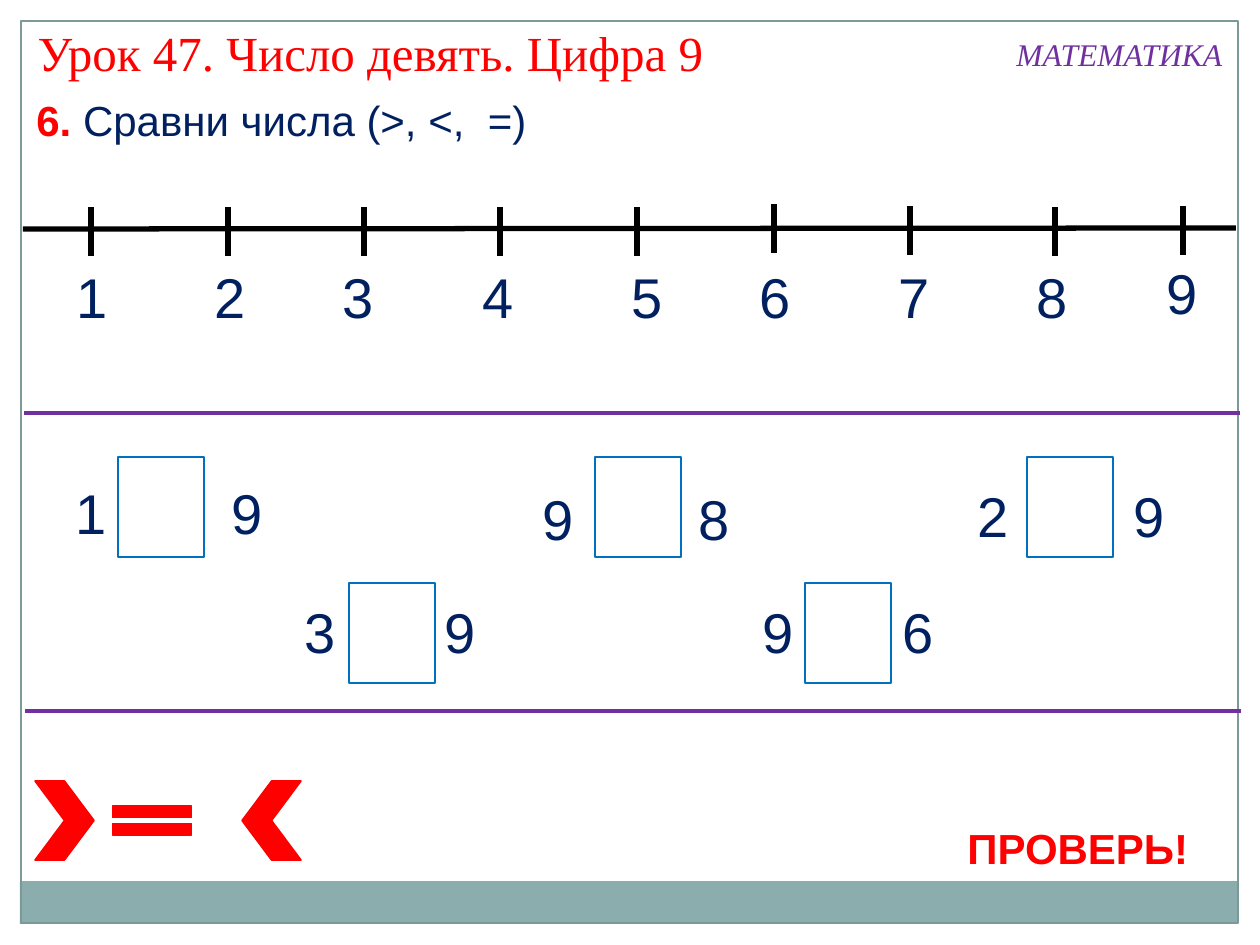
import pptx
import pptx.util
import pptx.dml.color
import pptx.enum.shapes
import pptx.enum.text
from lxml import etree

PX = 914400 / 126
SHAPE = pptx.enum.shapes.MSO_SHAPE
RED, NAVY, PURPLE, BLUE = "FF0000", "002060", "7030A0", "0070C0"
TEAL, FRAME_GREY, BLACK = "8CADAE", "7C999A", "000000"

TITLE = "Урок 47. Число девять. Цифра 9"
SUBJECT = "МАТЕМАТИКА"
TASK = [("6.", RED, True), (" Сравни числа (>, <,  =)", NAVY, False)]
CHECK = "ПРОВЕРЬ!"

# tick x, tick top, digit left, digit top; the digits are 1 to 9
NUMBER_LINE = [
    (91, 207, 64, 256), (228, 207, 202, 256), (364, 207, 330, 256),
    (500, 207, 470, 256), (637, 207, 619, 256), (774, 204, 747, 256),
    (910, 206, 886, 256), (1055, 207, 1024, 256), (1183, 206, 1154, 252),
]
TICK_HEIGHT = 49

# left number, right number, text position, distance between numbers, answer box position
COMPARISONS = [
    ("1", "9", (63, 472), 156, (118, 457)),
    ("9", "8", (530, 478), 156, (595, 457)),
    ("2", "9", (965, 475), 156, (1027, 457)),
    ("3", "9", (292, 591), 140, (349, 583)),
    ("9", "6", (750, 591), 140, (805, 583)),
]
ANSWER_SIZE = (86, 100)

# preset, box, rotation
SIGNS = [
    (SHAPE.CHEVRON, (35, 781, 59, 79), 0),
    (SHAPE.MATH_EQUAL, (98, 796, 108, 49), 0),
    (SHAPE.CHEVRON, (242, 781, 59, 79), 180),
]
DIVIDERS = [(24, 413, 1240, 413), (25, 711, 1241, 711)]


def px(*values):
    return [round(value * PX) for value in values]


def rgb(color):
    return pptx.dml.color.RGBColor.from_string(color)


def write(holder, runs, size=32, font="Arial", color=NAVY, italic=False,
          wrap=True, tab=None):
    """Fill one paragraph; runs is a string or a list of (text, color, bold)."""
    frame = holder.text_frame
    frame.word_wrap = wrap
    frame.auto_size = pptx.enum.text.MSO_AUTO_SIZE.NONE
    frame.vertical_anchor = pptx.enum.text.MSO_ANCHOR.TOP
    paragraph = frame.paragraphs[0]
    paragraph.alignment = pptx.enum.text.PP_ALIGN.LEFT
    if tab:
        tabs = etree.SubElement(paragraph._p.get_or_add_pPr(), pptx.oxml.ns.qn("a:tabLst"))
        etree.SubElement(tabs, pptx.oxml.ns.qn("a:tab"), pos=str(px(tab)[0]), algn="l")
    if isinstance(runs, str):
        runs = [(runs, color, False)]
    for text, run_color, bold in runs:
        run = paragraph.add_run()
        run.text = text
        run.font.name = font
        run.font.size = pptx.util.Pt(size)
        run.font.bold = bold
        run.font.italic = italic
        run.font.color.rgb = rgb(run_color)


def add_text(slide, box, runs, **style):
    write(slide.shapes.add_textbox(*px(*box)), runs, **style)


def add_shape(slide, preset, box, fill=None, line=None, width=0.9, rotation=0):
    shape = slide.shapes.add_shape(preset, *px(*box))
    shape.shadow.inherit = False
    shape.rotation = rotation
    if fill:
        shape.fill.solid()
        shape.fill.fore_color.rgb = rgb(fill)
    else:
        shape.fill.background()
    if line:
        shape.line.color.rgb = rgb(line)
        shape.line.width = pptx.util.Pt(width)
    else:
        shape.line.fill.background()


def add_line(slide, ends, color, width):
    line = slide.shapes.add_connector(pptx.enum.shapes.MSO_CONNECTOR.STRAIGHT, *px(*ends))
    line.line.color.rgb = rgb(color)
    line.line.width = pptx.util.Pt(width)
    etree.SubElement(line._element.spPr, pptx.oxml.ns.qn("a:effectLst"))


def main():
    deck = pptx.Presentation()
    deck.slide_width, deck.slide_height = px(1260, 945)
    slide = deck.slides.add_slide(deck.slide_layouts[5])

    add_shape(slide, SHAPE.RECTANGLE, (20, 881, 1217, 43), fill=TEAL)
    add_shape(slide, SHAPE.RECTANGLE, (21, 21, 1217, 902), line=FRAME_GREY, width=0.75)

    title = slide.shapes.title
    title.left, title.top, title.width, title.height = px(25, 16, 764, 72)
    write(title, TITLE, size=28, font="Times New Roman", color=RED)
    add_text(slide, (1004, 29, 233, 50), SUBJECT, size=18, font="Times New Roman",
             color=PURPLE, italic=True, wrap=False)
    add_text(slide, (24, 88, 1047, 63), TASK, size=24)
    add_text(slide, (955, 816, 276, 63), [(CHECK, RED, True)], size=24)

    add_line(slide, (23, 229, 1236, 228), BLACK, 3)
    for number, (tick, tick_top, left, top) in enumerate(NUMBER_LINE, start=1):
        add_line(slide, (tick, tick_top, tick, tick_top + TICK_HEIGHT), BLACK, 3)
        add_text(slide, (left, top, 49, 81), str(number))

    for ends in DIVIDERS:
        add_line(slide, ends, PURPLE, 2.25)
    for first, second, place, distance, answer in COMPARISONS:
        add_text(slide, (*place, 218, 81), f"{first}\t{second}", tab=distance)
        add_shape(slide, SHAPE.RECTANGLE, (*answer, *ANSWER_SIZE), line=BLUE)

    for preset, box, rotation in SIGNS:
        add_shape(slide, preset, box, fill=RED, line=RED, rotation=rotation)

    deck.save("out.pptx")


if __name__ == "__main__":
    main()
